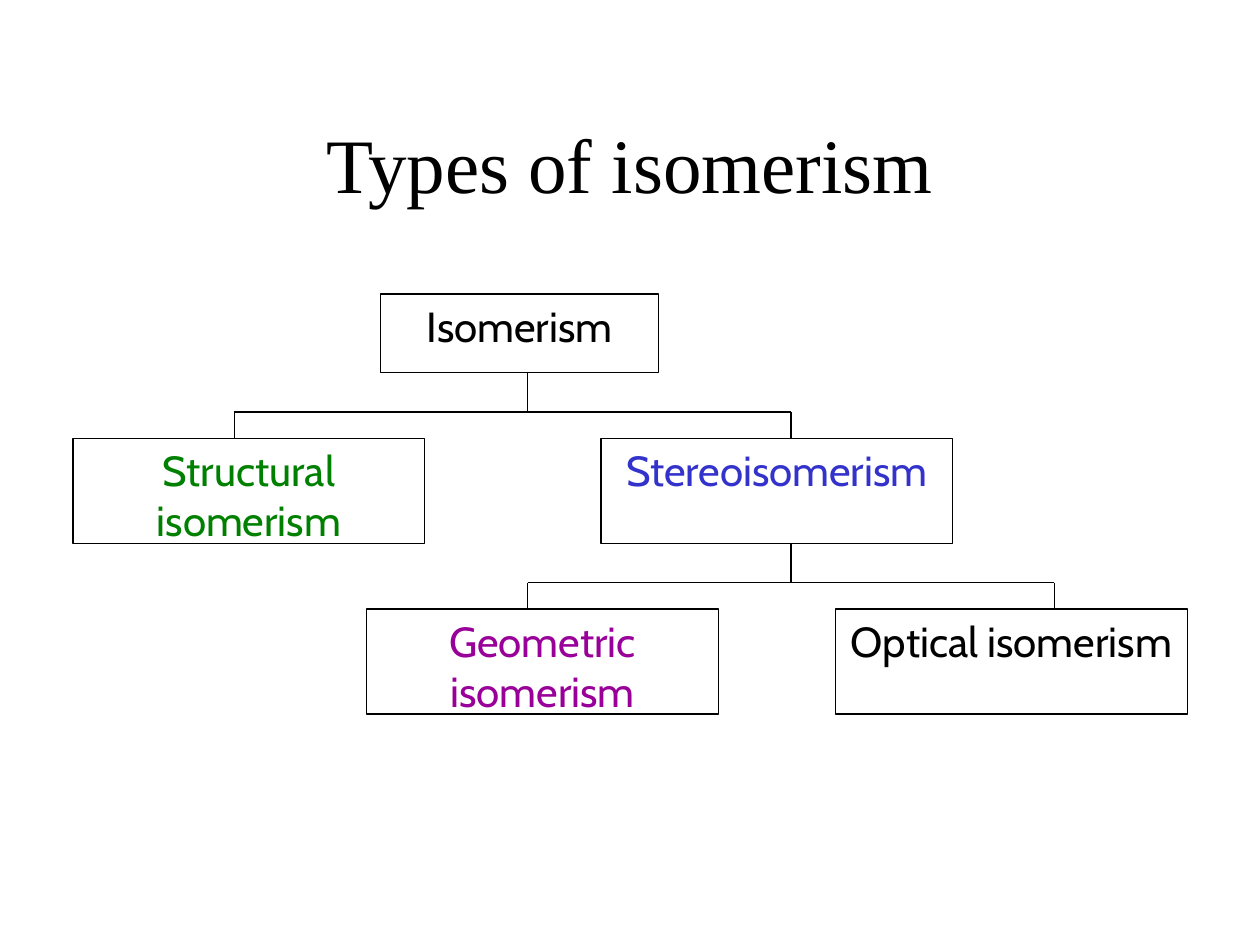
from lxml.etree import SubElement
from pptx import Presentation
from pptx.dml.color import RGBColor
from pptx.enum.shapes import MSO_CONNECTOR as Connector, MSO_SHAPE as Shape
from pptx.enum.text import MSO_ANCHOR as Anchor, PP_ALIGN as Align
from pptx.oxml.ns import qn
from pptx.util import Pt

BLACK = RGBColor(0x00, 0x00, 0x00)
WHITE = RGBColor(0xFF, 0xFF, 0xFF)
GREEN = RGBColor(0x00, 0x80, 0x00)
BLUE = RGBColor(0x33, 0x33, 0xCC)
PURPLE = RGBColor(0x99, 0x00, 0x99)

# Content: label, colour, left, top, width, height
TITLE = "Types of isomerism"
WIDTH, HEIGHT = 201, 60
BOXES = [
    ("Isomerism", BLACK, 217.5, 168, 159, 45),
    ("Structural isomerism", GREEN, 41.75, 250.5, WIDTH, HEIGHT),
    ("Stereoisomerism", BLUE, 343.5, 250.5, WIDTH, HEIGHT),
    ("Geometric isomerism", PURPLE, 209.5, 348, WIDTH, HEIGHT),
    ("Optical isomerism", BLACK, 477.5, 348, WIDTH, HEIGHT),
]
# Branches: parent x, child xs, parent bottom, child top
BRANCHES = [
    (301.5, (134, 452), 213, 250.5),
    (452, (301.5, 602.5), 310.5, 348),
]
DROP = 15  # height of a child's stem
LINE_WIDTH = 0.75
TITLE_FONT = {"name": "Times New Roman", "size": Pt(44)}
BOX_FONT = {"name": "Cabin", "size": Pt(24)}


def write(frame, text, colour, font, anchor):
    frame.word_wrap = True
    frame.vertical_anchor = anchor
    para = frame.paragraphs[0]
    para.alignment = Align.CENTER
    span = para.add_run()
    span.text = text
    for name, value in font.items():
        setattr(span.font, name, value)
    span.font.color.rgb = colour


def outline(line):
    line.color.rgb = BLACK
    line.width = Pt(LINE_WIDTH)


def add_box(page, label, colour, *place):
    box = page.shapes.add_shape(Shape.RECTANGLE, *map(Pt, place))
    box.shadow.inherit = False
    box.fill.solid()
    box.fill.fore_color.rgb = WHITE
    outline(box.line)
    write(box.text_frame, label, colour, BOX_FONT, Anchor.TOP)


def add_line(page, *ends):
    line = page.shapes.add_connector(Connector.STRAIGHT, *map(Pt, ends))
    outline(line.line)
    SubElement(line._element.spPr, qn("a:effectLst"))


def add_branch(page, parent, children, bottom, top):
    bar = top - DROP
    add_line(page, children[0], bar, children[-1], bar)
    add_line(page, parent, bottom, parent, bar)
    for child in children:
        add_line(page, child, bar, child, top)


def main():
    deck = Presentation()
    deck.slide_width, deck.slide_height = Pt(720), Pt(540)
    page = deck.slides.add_slide(deck.slide_layouts[5])

    # Title
    title = page.shapes.title
    title.left, title.top, title.width, title.height = map(Pt, (54, 48, 612, 90))
    write(title.text_frame, TITLE, BLACK, TITLE_FONT, Anchor.MIDDLE)

    # Tree
    for box in BOXES:
        add_box(page, *box)
    for branch in BRANCHES:
        add_branch(page, *branch)

    deck.save("out.pptx")


if __name__ == "__main__":
    main()
